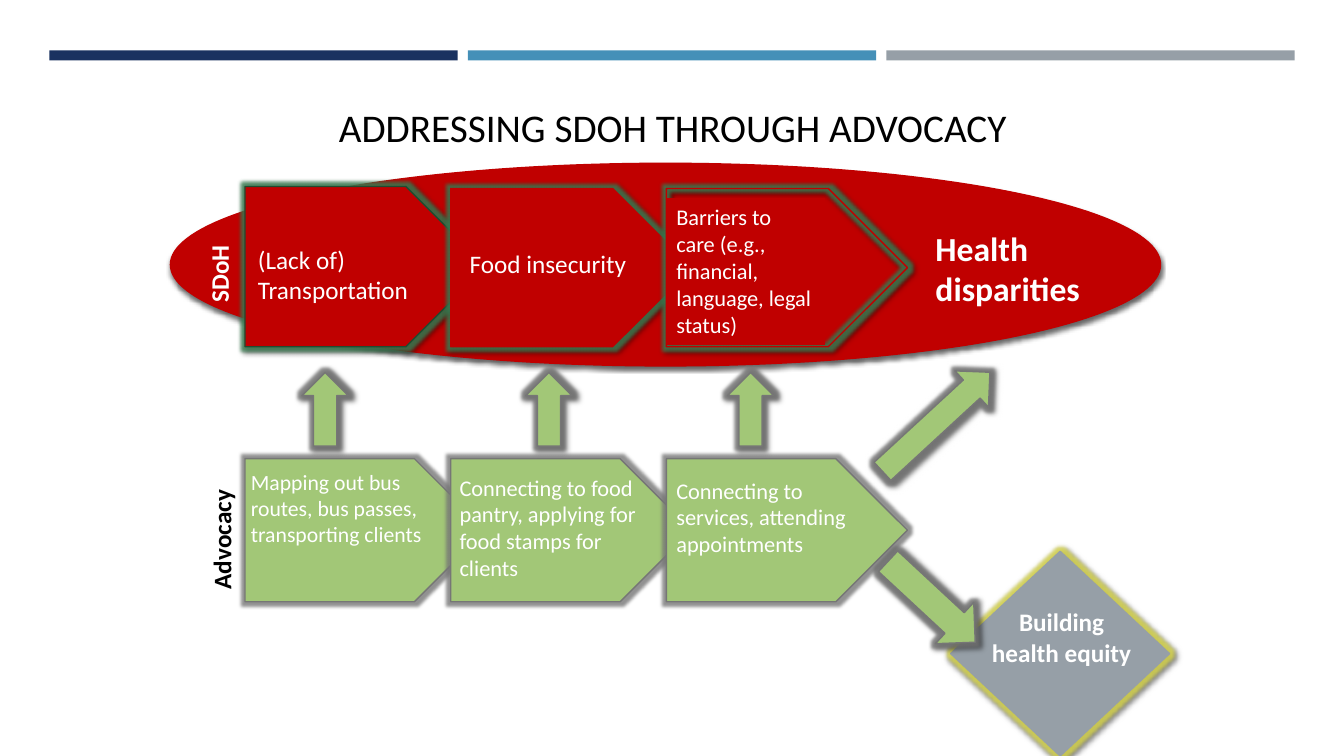
from dataclasses import dataclass
from lxml.etree import SubElement as Sub
from pptx import Presentation
from pptx.dml.color import RGBColor as RGB
from pptx.enum.shapes import MSO_SHAPE as Kind
from pptx.enum.text import MSO_ANCHOR as Anchor, MSO_AUTO_SIZE as Auto, PP_ALIGN as Align
from pptx.oxml.ns import qn
from pptx.slide import Slide
from pptx.util import Pt

PX = 9144
WHITE, BLACK = RGB(255, 255, 255), RGB(0, 0, 0)
RED, GREEN = RGB(0xC0, 0, 0), RGB(0xA2, 0xC7, 0x77)
NAVY, BLUE, GRAY = RGB(0x1A, 0x32, 0x60), RGB(0x45, 0x90, 0xB8), RGB(0x96, 0x9F, 0xA7)
EDGE, PINE = RGB(0x76, 0x76, 0x76), RGB(0x21, 0x4B, 0x30)
MOSS, GOLD = RGB(0x3C, 0x80, 0x54), RGB(0xDE, 0xDC, 0x50)


def write(shape, text, size=16, color=WHITE, bold=False, align=Align.LEFT, anchor=Anchor.TOP):
    """Put formatted text into a shape."""
    frame = shape.text_frame
    frame.word_wrap, frame.auto_size = True, Auto.NONE
    frame.vertical_anchor = anchor
    para = frame.paragraphs[0]
    para.alignment = align
    run = para.add_run()
    run.text = text
    font = run.font
    font.name, font.size, font.bold = "Calibri", Pt(size), bold
    font.color.rgb = color


@dataclass
class Board:
    """Draws styled elements on one slide."""
    slide: Slide

    def title(self, text, *box):
        shape = self.slide.shapes.title
        shape.left, shape.top, shape.width, shape.height = [n * PX for n in box]
        write(shape, text, size=28, color=BLACK, align=Align.CENTER, anchor=Anchor.BOTTOM)

    def shape(self, kind, *box, fill=None, line=None, turn=0, glow=None, shade=0):
        item = self.slide.shapes.add_shape(kind, *[n * PX for n in box])
        item.rotation = turn
        if fill is None:
            item.fill.background()
        else:
            item.fill.solid()
            item.fill.fore_color.rgb = fill
        if line is None:
            item.line.fill.background()
        else:
            item.line.color.rgb = line
            item.line.width = Pt(1)
        item.shadow.inherit = False
        fx = item.element.spPr.find(qn("a:effectLst"))
        if glow is not None:
            self.tint(Sub(fx, qn("a:glow"), rad=str(Pt(5))), glow, 80)
        if shade:
            cast = Sub(fx, qn("a:outerShdw"), blurRad=str(Pt(3)), dist=str(Pt(2)),
                       dir=str(shade * 60000), rotWithShape="0")
            self.tint(cast, BLACK, 60)
        return item

    def tint(self, node, color, alpha):
        mark = Sub(node, qn("a:srgbClr"), val=str(color))
        Sub(mark, qn("a:alpha"), val=str(alpha * 1000))

    def label(self, text, *box, turn=0, **style):
        item = self.slide.shapes.add_textbox(*[n * PX for n in box])
        item.rotation = turn
        write(item, text, **style)

    def arrow(self, *box, turn=270):
        self.shape(Kind.RIGHT_ARROW, *box, fill=GREEN, line=EDGE, turn=turn, glow=EDGE, shade=45)


def main():
    deck = Presentation()
    deck.slide_width, deck.slide_height = 1333 * PX, 750 * PX
    board = Board(deck.slides.add_slide(deck.slide_layouts[5]))

    for i, color in enumerate((NAVY, BLUE, GRAY)):
        board.shape(Kind.RECTANGLE, 49 + 415 * i, 50, 405, 10, fill=color)
    board.title("ADDRESSING SDOH THROUGH ADVOCACY", 225, 10, 884, 144)

    board.shape(Kind.OVAL, 169, 162, 982, 201, fill=RED, line=RED, shade=90)
    needs = (
        ("(Lack of) Transportation", 18, (246, 237, 198, 71), (243, 185, 239, 159), RED, PINE),
        ("Food insecurity", 18, (456, 241, 198, 40), (447, 187, 239, 157), RED, RED),
        ("Barriers to care (e.g., financial, language, legal status)", 16,
         (661, 197, 157, 145), (661, 187, 239, 157), None, RED),
    )
    for text, size, area, box, fill, line in needs:
        board.shape(Kind.PENTAGON, *box, fill=fill, line=line, glow=MOSS, shade=45)
        if fill is None:
            board.shape(Kind.RECTANGLE, *area, fill=RED, line=RED)
        board.label(text, *area, size=size)

    steps = (
        ("Mapping out bus routes, bus passes, transporting clients", 15.5, 243, (239, 460, 204, 88)),
        ("Connecting to food pantry, applying for food stamps for clients", 16, 447,
         (446, 465, 213, 118)),
        ("Connecting to services, attending appointments", 16, 661, (661, 468, 204, 91)),
    )
    for text, size, left, area in steps:
        board.shape(Kind.PENTAGON, left, 455, 239, 142, fill=GREEN, line=EDGE, glow=EDGE)
        board.label(text, *area, size=size)

    board.label("Health disparities", 918, 221, 228, 91, size=24, bold=True)
    board.label("SDoH", 171, 244, 92, 40, turn=270, size=18, bold=True)
    board.label("Advocacy", 153, 508, 133, 40, turn=270, size=18, bold=True, color=BLACK)

    for left in (286, 508, 708):
        board.arrow(left, 383, 73, 46)
    board.arrow(856, 394, 145, 49, turn=317.3)
    board.shape(Kind.DIAMOND, 943, 547, 217, 203, fill=GRAY, line=GRAY, glow=GOLD, shade=45)
    board.label("Building health equity", 966, 597, 174, 71, size=18, bold=True, align=Align.CENTER)
    board.arrow(865, 569, 118, 56, turn=42.9)
    deck.save("out.pptx")


if __name__ == "__main__":
    main()
